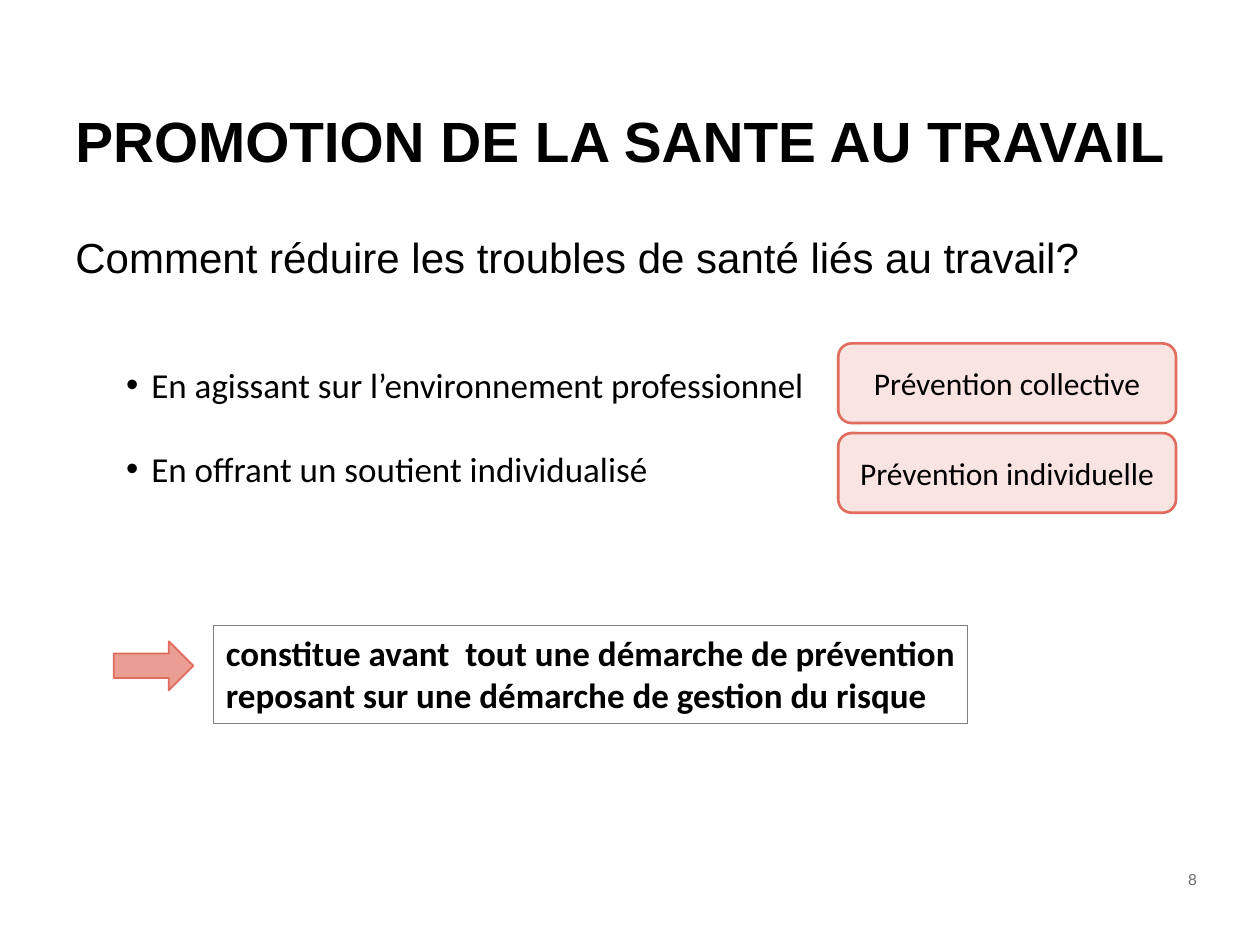
from dataclasses import dataclass, field
from typing import Any

from lxml import etree
from pptx import Presentation
from pptx import util as u
from pptx.dml.color import RGBColor
from pptx.enum import shapes, text
from pptx.oxml.ns import qn

BLACK, CORAL, SALMON, GREY, FRAME_GREY = "000000", "DF6C5D", "E99D93", "6B6C6E", "808080"
ALIGN, ANCHOR, SHAPE = text.PP_ALIGN, text.MSO_ANCHOR, shapes.MSO_SHAPE


@dataclass
class Label:
    """Text lines with their place and look; lengths in points."""
    lines: list[str]
    box: tuple[float, float, float, float]
    font: dict[str, Any]
    color: str = BLACK
    paragraph: dict[str, Any] = field(default_factory=dict)
    frame: dict[str, Any] = field(default_factory=dict)
    bullet_indent: float = 0
    gap: float = 0


@dataclass
class Outline:
    preset: Any
    line_width: float
    line: str = CORAL
    fill: str | None = None
    opacity: int = 100


def rgb(color: str) -> RGBColor:
    return RGBColor.from_string(color)


def points(box: tuple[float, float, float, float]) -> list[u.Pt]:
    return [u.Pt(length) for length in box]


def apply(target: Any, values: dict[str, Any]) -> None:
    for name, value in values.items():
        setattr(target, name, value)


def add_bullet(paragraph: Any, indent: float) -> None:
    properties = paragraph._p.get_or_add_pPr()
    properties.set("marL", str(u.Pt(indent)))
    properties.set("indent", str(-u.Pt(indent)))
    etree.SubElement(properties, qn("a:buFont"), typeface="Arial")
    etree.SubElement(properties, qn("a:buChar"), char="•")


def write_text(shape: Any, label: Label) -> None:
    frame = shape.text_frame
    apply(frame, {"word_wrap": True, **label.frame})
    for index, line in enumerate(label.lines):
        paragraph = frame.add_paragraph() if index else frame.paragraphs[0]
        if label.bullet_indent:
            add_bullet(paragraph, label.bullet_indent)
        if index:
            paragraph.space_before = u.Pt(label.gap)
        apply(paragraph, {"alignment": ALIGN.LEFT, **label.paragraph})
        run = paragraph.add_run()
        run.text = line
        apply(run.font, label.font)
        run.font.color.rgb = rgb(label.color)


def add_label(slide: Any, label: Label) -> None:
    write_text(slide.shapes.add_textbox(*points(label.box)), label)


def add_outline(slide: Any, box: tuple[float, float, float, float], outline: Outline) -> Any:
    shape = slide.shapes.add_shape(outline.preset, *points(box))
    shape.shadow.inherit = False
    shape.line.color.rgb = rgb(outline.line)
    shape.line.width = u.Pt(outline.line_width)
    if outline.fill is None:
        shape.fill.background()
        return shape
    shape.fill.solid()
    shape.fill.fore_color.rgb = rgb(outline.fill)
    if outline.opacity < 100:
        color = shape._element.spPr.find(qn("a:solidFill")).find(qn("a:srgbClr"))
        etree.SubElement(color, qn("a:alpha"), val=str(outline.opacity * 1000))
    return shape


def font(name: str, size: float, bold: bool = False) -> dict[str, Any]:
    return {"name": name, "size": u.Pt(size), "bold": bold}


MIDDLE = {"vertical_anchor": ANCHOR.MIDDLE}
LABELS = [
    Label(["PROMOTION DE LA SANTE AU TRAVAIL"], (36, 35, 648, 90),
          font("Arial", 32.4, True), frame=MIDDLE),
    Label(["Comment réduire les troubles de santé liés au travail?"],
          (36, 129, 648, 67.5), font("Arial", 24)),
    Label(["En agissant sur l’environnement professionnel",
           "En offrant un soutient individualisé"],
          (65, 204, 405.5, 80), font("Calibri", 20),
          frame={"word_wrap": False}, paragraph={"level": 1},
          bullet_indent=14.4, gap=24),
    Label(["8"], (651.5, 491, 39.5, 22.5), font("Arial", 9), GREY,
          paragraph={"alignment": ALIGN.RIGHT}, frame=MIDDLE),
]
CONCLUSION = Label(
    ["constitue avant  tout une démarche de prévention "
     "reposant sur une démarche de gestion du risque"],
    (122, 357.5, 431, 55.75), font("Calibri", 20, True),
    frame={"vertical_anchor": ANCHOR.TOP, "margin_right": u.Pt(4)})
ARROW_BOX = (65, 366.5, 45.5, 28)
PREVENTIONS = ["Prévention collective", "Prévention individuelle"]
PREVENTION_TOP, PREVENTION_STEP = 196.25, 51.25


def main() -> None:
    presentation = Presentation()
    presentation.slide_width, presentation.slide_height = u.Pt(720), u.Pt(540)
    slide = presentation.slides.add_slide(presentation.slide_layouts[6])

    for label in LABELS:
        add_label(slide, label)

    add_outline(slide, ARROW_BOX, Outline(SHAPE.RIGHT_ARROW, 1, fill=SALMON))
    frame = add_outline(slide, CONCLUSION.box, Outline(SHAPE.RECTANGLE, 0.75, FRAME_GREY))
    write_text(frame, CONCLUSION)

    card = Outline(SHAPE.ROUNDED_RECTANGLE, 1.5, fill=SALMON, opacity=27)
    for index, name in enumerate(PREVENTIONS):
        box = (479, PREVENTION_TOP + index * PREVENTION_STEP, 193, 45.5)
        label = Label([name], box, font("Calibri", 18),
                      paragraph={"alignment": ALIGN.CENTER}, frame=MIDDLE)
        write_text(add_outline(slide, box, card), label)

    presentation.save("out.pptx")


if __name__ == "__main__":
    main()
